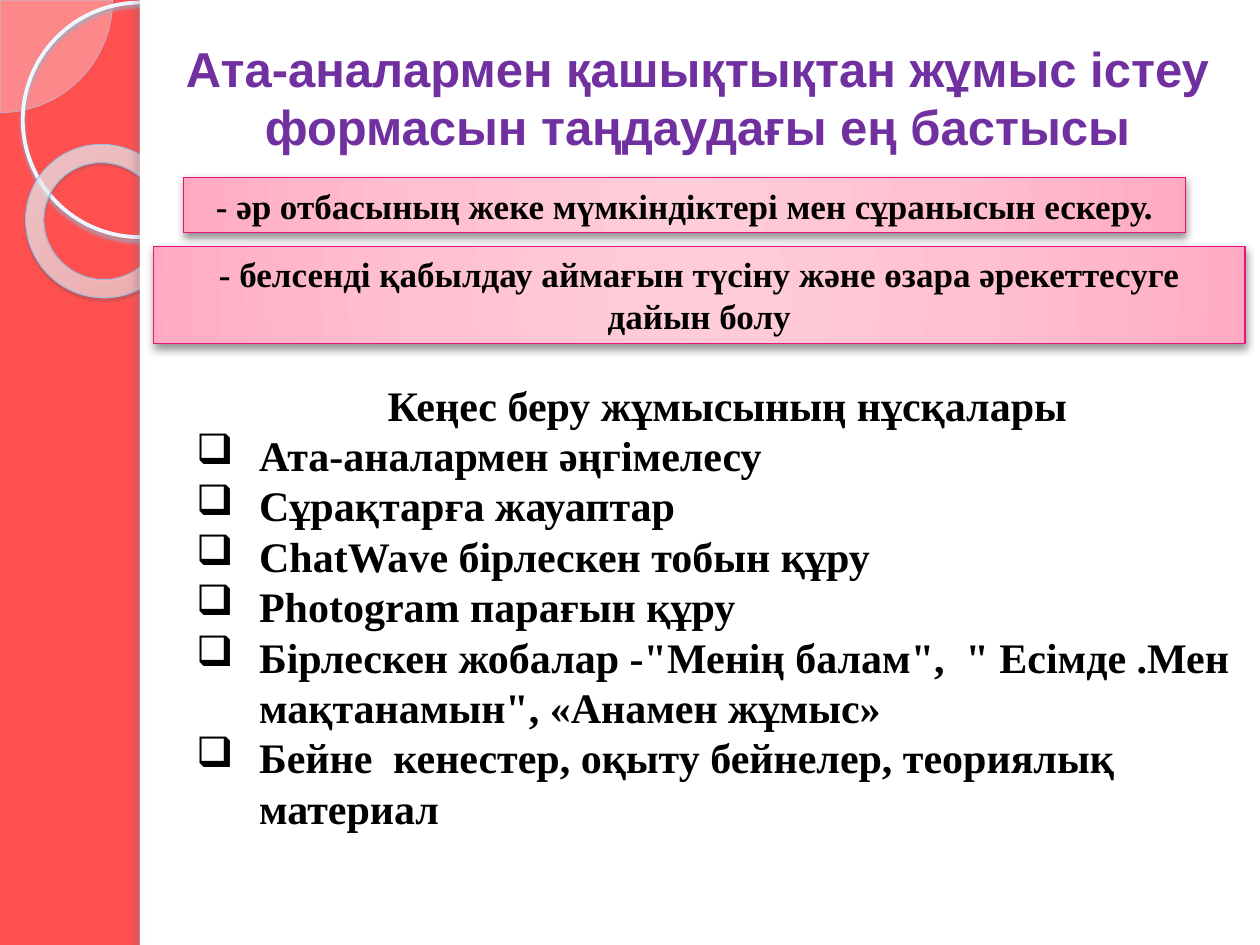
from dataclasses import dataclass
from typing import Optional

from lxml.etree import SubElement
from pptx import Presentation
from pptx.dml.color import RGBColor
from pptx.enum.shapes import MSO_SHAPE
from pptx.enum.text import MSO_ANCHOR, PP_ALIGN
from pptx.oxml.ns import qn
from pptx.util import Pt


@dataclass(frozen=True)
class Box:
    """A place and size in points."""
    left: float
    top: float
    width: float
    height: float


@dataclass(frozen=True)
class Shadow:
    """An outer shadow with opacity in percent, lengths in points, angle in degrees."""
    color: str
    opacity: int
    blur: float
    distance: float
    angle: int


@dataclass(frozen=True)
class Gradient:
    """A circular gradient of (position, colour, opacity) stops."""
    stops: tuple
    focus: tuple


@dataclass(frozen=True)
class Figure:
    """A preset shape with its look."""
    kind: MSO_SHAPE
    box: Box
    fill: Optional[str] = None
    opacity: int = 100
    gradient: Optional[Gradient] = None
    line: Optional[str] = None
    line_width: float = 0.75
    shadow: Optional[Shadow] = None
    rotation: float = 0
    adjustments: tuple = ()


@dataclass(frozen=True)
class Style:
    """A text style."""
    font: str
    size: int
    color: str = "000000"


PINK = Gradient(((0, "FFCDD9", 100), (50, "FFC1D0", 100), (97, "FFADC2", 100),
                 (100, "FFA7BE", 100)), (50, 50, 50, 50))
GLASS = Gradient(((0, "F9FCFF", 70), (70, "FDFEFF", 55), (100, "9FD2FF", 60)),
                 (-408, -50, 508, 150))
BANNER_SHADOW = Shadow("000000", 43, 5, 2, 90)
TITLE = Style("Arial", 28, "7030A0")
BANNER = Style("Times New Roman", 20)
BODY = Style("Times New Roman", 24)

DECORATIONS = (
    Figure(MSO_SHAPE.PIE, Box(-64.2, -64.2, 128.6, 128.6), "F8FCFF", 33,
           line="A6CBEC", line_width=0.25, adjustments=(0, 54.02)),
    Figure(MSO_SHAPE.OVAL, Box(13, 1.5, 134, 134), line="EEF7FF", line_width=2.15,
           shadow=Shadow("97AFC4", 85, 2, 2, 90)),
    Figure(MSO_SHAPE.DONUT, Box(14.4, 82.8, 88.6, 87.1), gradient=GLASS, line="98BEE0",
           line_width=0.58, shadow=Shadow("475765", 35, 1, 1.2, 75), rotation=38.6,
           adjustments=(0.12,)),
    Figure(MSO_SHAPE.RECTANGLE, Box(80, 0, 640, 540), "FFFFFF"),
    Figure(MSO_SHAPE.RECTANGLE, Box(80, 0, 5.8, 540), "FFFFFF",
           shadow=Shadow("697580", 25, 3, 3, 180)),
)
BANNERS = (
    (Box(105, 101.5, 572.5, 31.5), "- әр отбасының жеке мүмкіндіктері мен сұранысын ескеру."),
    (Box(87.7, 140.8, 623.8, 55.4),
     "- белсенді қабылдау аймағын түсіну және өзара әрекеттесуге дайын болу"),
)
OPTIONS = (
    "Ата-аналармен әңгімелесу",
    "Сұрақтарға жауаптар",
    "ChatWave бірлескен тобын құру",
    "Photogram парағын құру",
    'Бірлескен жобалар -"Менің балам",  " Есімде .Мен мақтанамын", «Анамен жұмыс»',
    "Бейне  кенестер, оқыту бейнелер, теориялық материал",
)


def rgb(color: str) -> RGBColor:
    """Turn a hex string into a colour."""
    return RGBColor.from_string(color)


def place(box: Box) -> tuple:
    """Give the box as four lengths."""
    return tuple(Pt(value) for value in (box.left, box.top, box.width, box.height))


def add_color(parent, color: str, opacity: int) -> None:
    """Add a colour element with opacity."""
    element = SubElement(parent, qn("a:srgbClr"), val=color)
    SubElement(element, qn("a:alpha"), val=str(opacity * 1000))


def apply_gradient(shape, gradient: Gradient) -> None:
    """Fill the shape with a circular gradient."""
    shape.fill.gradient()
    element = shape._element.spPr.find(qn("a:gradFill"))
    for child in list(element):
        element.remove(child)
    stops = SubElement(element, qn("a:gsLst"))
    for position, color, opacity in gradient.stops:
        add_color(SubElement(stops, qn("a:gs"), pos=str(position * 1000)), color, opacity)
    circle = SubElement(element, qn("a:path"), {"path": "circle"})
    edges = {side: str(value * 1000) for side, value in zip("ltrb", gradient.focus)}
    SubElement(circle, qn("a:fillToRect"), edges)


def apply_shadow(shape, shadow: Shadow) -> None:
    """Give the shape an outer shadow."""
    effects = shape._element.spPr.find(qn("a:effectLst"))
    outer = SubElement(effects, qn("a:outerShdw"), blurRad=str(Pt(shadow.blur)),
                       dist=str(Pt(shadow.distance)), dir=str(shadow.angle * 60000),
                       algn="ctr", rotWithShape="0")
    add_color(outer, shadow.color, shadow.opacity)


def draw_figure(slide, figure: Figure):
    """Draw one preset shape."""
    shape = slide.shapes.add_shape(figure.kind, *place(figure.box))
    shape.rotation = figure.rotation
    for index, value in enumerate(figure.adjustments):
        shape.adjustments[index] = value
    if figure.gradient:
        apply_gradient(shape, figure.gradient)
    elif figure.fill:
        shape.fill.solid()
        shape.fill.fore_color.rgb = rgb(figure.fill)
        color = shape._element.spPr.find(qn("a:solidFill")).find(qn("a:srgbClr"))
        SubElement(color, qn("a:alpha"), val=str(figure.opacity * 1000))
    else:
        shape.fill.background()
    if figure.line:
        shape.line.color.rgb = rgb(figure.line)
        shape.line.width = Pt(figure.line_width)
    else:
        shape.line.fill.background()
    shape.shadow.inherit = False
    if figure.shadow:
        apply_shadow(shape, figure.shadow)
    return shape


def write(paragraph, text: str, style: Style, bullet: str = "") -> None:
    """Write a centred line, or a left-aligned one behind a bullet."""
    paragraph.alignment = PP_ALIGN.LEFT if bullet else PP_ALIGN.CENTER
    if bullet:
        properties = paragraph._p.get_or_add_pPr()
        properties.set("marL", str(Pt(36)))
        properties.set("indent", str(Pt(-36)))
        SubElement(properties, qn("a:buChar"), char=bullet)
    run = paragraph.add_run()
    run.text = text
    run.font.name = style.font
    run.font.size = Pt(style.size)
    run.font.bold = True
    run.font.color.rgb = rgb(style.color)


def add_text_frame(slide, box: Box, anchor: MSO_ANCHOR):
    """Add a wrapping text box and return its frame."""
    frame = slide.shapes.add_textbox(*place(box)).text_frame
    frame.word_wrap = True
    frame.vertical_anchor = anchor
    return frame


def main() -> None:
    """Build and save the slide."""
    presentation = Presentation()
    presentation.slide_width, presentation.slide_height = Pt(720), Pt(540)
    slide = presentation.slides.add_slide(presentation.slide_layouts[6])
    slide.background.fill.solid()
    slide.background.fill.fore_color.rgb = rgb("FF5050")
    for figure in DECORATIONS:
        draw_figure(slide, figure)
    title = add_text_frame(slide, Box(93.6, 15.1, 609.8, 80.6), MSO_ANCHOR.MIDDLE)
    write(title.paragraphs[0],
          "Ата-аналармен қашықтықтан жұмыс істеу формасын таңдаудағы ең бастысы", TITLE)
    for box, text in BANNERS:
        banner = draw_figure(slide, Figure(MSO_SHAPE.RECTANGLE, box, gradient=PINK,
                                           line="EA157A", shadow=BANNER_SHADOW))
        write(banner.text_frame.paragraphs[0], text, BANNER)
    body = add_text_frame(slide, Box(105, 213.1, 621.4, 303.1), MSO_ANCHOR.TOP)
    write(body.paragraphs[0], "Кеңес беру жұмысының нұсқалары", BODY)
    for option in OPTIONS:
        write(body.add_paragraph(), option, BODY, "❑")
    presentation.save("out.pptx")


if __name__ == "__main__":
    main()
